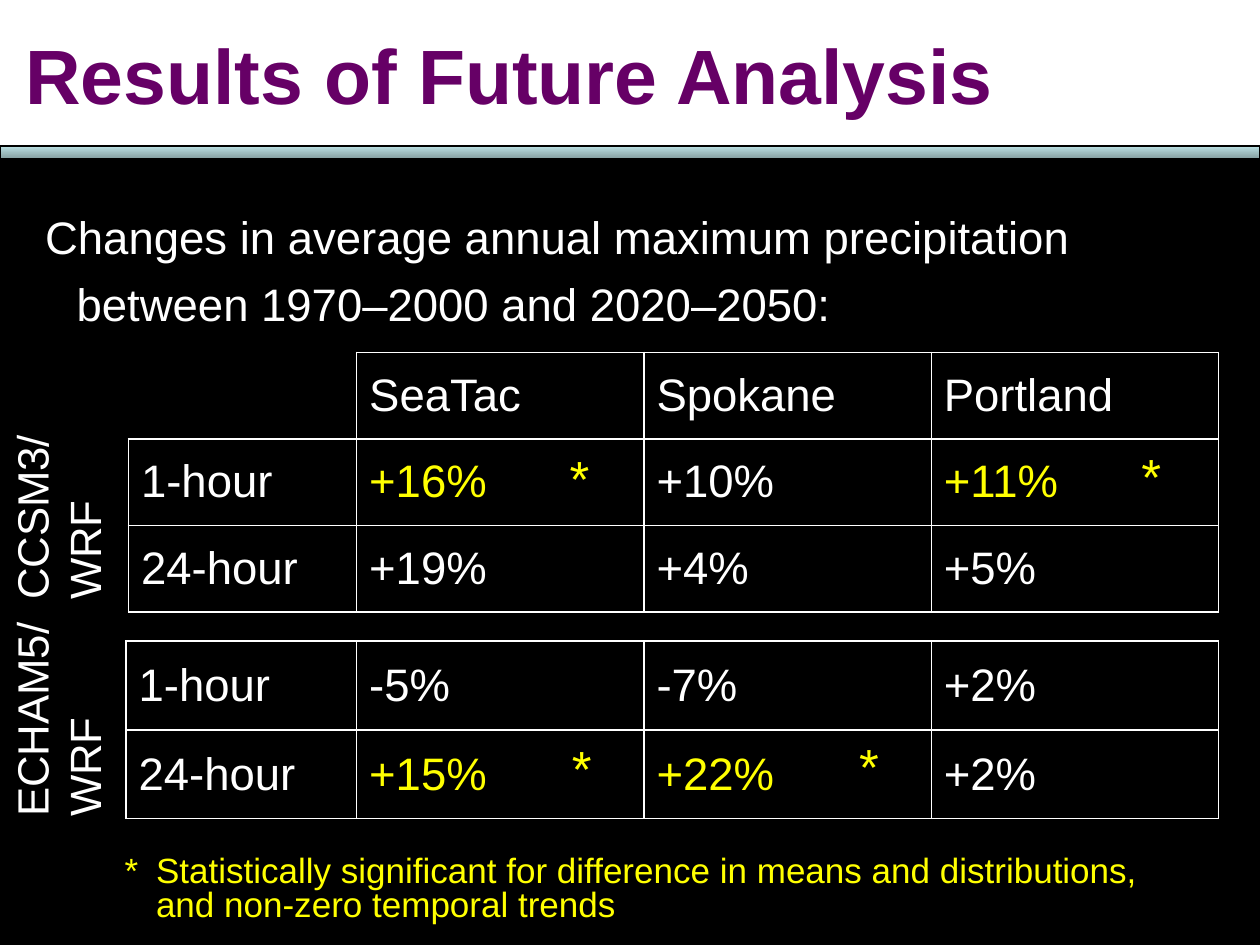
from lxml import etree
from pptx import Presentation
from pptx.dml.color import RGBColor
from pptx.enum import shapes, text
from pptx.oxml import ns
from pptx.util import Pt

COLORS = {"ink": "FFFFFF", "back": "000000", "title": "660066", "star": "FFFF00",
          "bar_top": "BBE0E3", "bar_base": "86A0A2"}
CITY_WIDTH = 164.2


def rgb(name):
    """Return the named colour."""
    return RGBColor.from_string(COLORS[name])


def set_values(target, values):
    """Set each attribute of the target from a dict."""
    for key, value in values.items():
        setattr(target, key, value)


def write(paragraph, words, size, color, **extra):
    """Fill a paragraph with one formatted run."""
    run = paragraph.add_run()
    run.text = words
    set_values(run.font, {"name": "Arial", "size": Pt(size), **extra})
    run.font.color.rgb = rgb(color)


def add_note(slide, box, words, size, color, spacing=1.0, hanging=0, rotation=0):
    """Add a wrapped text box, with an optional hanging indent."""
    note = slide.shapes.add_textbox(*map(Pt, box))
    note.rotation = rotation
    note.text_frame.word_wrap = True
    paragraph = note.text_frame.paragraphs[0]
    paragraph.line_spacing = spacing
    if hanging:
        set_values_xml = {"marL": Pt(hanging), "indent": -Pt(hanging)}
        for key, value in set_values_xml.items():
            paragraph._p.get_or_add_pPr().set(key, str(int(value)))
    write(paragraph, words, size, color)


def add_header(slide, box):
    """Place the title band and the gradient bar along its foot."""
    left, top, width, height = box
    title = slide.shapes.title
    set_values(title, dict(zip(("left", "top", "width", "height"), map(Pt, box))))
    title.fill.solid()
    title.fill.fore_color.rgb = rgb("ink")
    title.line.color.rgb = rgb("ink")
    title.line.width = Pt(0.75)
    set_values(title.text_frame, {
        "margin_left": Pt(14.4), "margin_right": Pt(7.2), "margin_top": Pt(7.2),
        "margin_bottom": Pt(7.2), "word_wrap": False,
        "auto_size": text.MSO_AUTO_SIZE.NONE, "vertical_anchor": text.MSO_ANCHOR.MIDDLE})
    heading = title.text_frame.paragraphs[0]
    heading.alignment = text.PP_ALIGN.LEFT
    write(heading, "Results of Future Analysis", 44, "title", bold=True)

    bar = slide.shapes.add_shape(shapes.MSO_SHAPE.RECTANGLE, Pt(left),
                                 Pt(top + height - 0.5), Pt(width), Pt(7))
    bar.shadow.inherit = False
    bar.fill.gradient()
    bar.fill.gradient_angle = 270
    for stop, name in zip(bar.fill.gradient_stops, ("bar_top", "bar_base")):
        stop.color.rgb = rgb(name)
    bar.line.color.rgb = rgb("back")
    bar.line.width = Pt(0.75)


def set_borders(cell, visible):
    """Draw white lines on the visible sides of a cell and clear the others."""
    properties = cell._tc.get_or_add_tcPr()
    for index, side in enumerate("LRTB"):
        line = etree.Element(ns.qn(f"a:ln{side}"), w=str(int(Pt(1))))
        if side in visible:
            paint = etree.SubElement(line, ns.qn("a:solidFill"))
            etree.SubElement(paint, ns.qn("a:srgbClr"), val=COLORS["ink"])
        else:
            etree.SubElement(line, ns.qn("a:noFill"))
        properties.insert(index, line)


def add_model(slide, box, rows, significant, stars, model, label_box):
    """Place one model's table, its stars and its upright label."""
    left, top, width, height = box
    frame = slide.shapes.add_table(len(rows), len(rows[0]), *map(Pt, box))
    grid = frame.table
    set_values(grid, {"first_row": False, "horz_banding": False})
    for index, column in enumerate(grid.columns):
        column.width = Pt(CITY_WIDTH if index else width - 3 * CITY_WIDTH)
    for r, row in enumerate(rows):
        grid.rows[r].height = Pt(height / len(rows))
        for c, words in enumerate(row):
            cell = grid.cell(r, c)
            cell.fill.background()
            cell.vertical_anchor = text.MSO_ANCHOR.MIDDLE
            set_borders(cell, "LRTB" if words else "RB")
            if words:
                color = "star" if words in significant else "ink"
                write(cell.text_frame.paragraphs[0], words, 26, color)
    for dx, dy in stars:
        add_note(slide, (left + dx, top + dy, 35.3, 41.8), "*", 29, "star")
    dx, dy, length, depth = label_box
    add_note(slide, (left + dx, top + dy, length, depth), model, 25, "ink", rotation=270)


def main():
    """Build the slide and save it."""
    deck = Presentation()
    set_values(deck, {"slide_width": Pt(720), "slide_height": Pt(540)})
    slide = deck.slides.add_slide(deck.slide_layouts[5])
    slide.background.fill.solid()
    slide.background.fill.fore_color.rgb = rgb("back")

    add_header(slide, (0, 0, 720, 84))
    add_note(slide, (18.7, 108.7, 648, 70),
             "Changes in average annual maximum precipitation between 1970–2000 and 2020–2050:",
             26, "ink", spacing=1.23, hanging=18)
    add_model(slide, (73.4, 201.4, 623, 148.3),
              [("", "SeaTac", "Spokane", "Portland"),
               ("1-hour", "+16%", "+10%", "+11%"),
               ("24-hour", "+19%", "+4%", "+5%")],
              {"+16%", "+11%"}, [(245, 50.6), (571.7, 49.2)],
              "CCSM3/WRF", (-95, 59.2, 110.2, 68.4))
    add_model(slide, (72, 366.4, 624.4, 101.4),
              [("1-hour", "-5%", "-7%", "+2%"),
               ("24-hour", "+15%", "+22%", "+2%")],
              {"+15%", "+22%"}, [(247.7, 51.2), (411.8, 49.8)],
              "ECHAM5/WRF", (-104.4, 7.3, 131.8, 68.4))
    add_note(slide, (64.1, 486, 623.5, 38.9),
             "* \tStatistically significant for difference in means and distributions, "
             "and non-zero temporal trends", 20, "star", spacing=0.8, hanging=18)
    deck.save("out.pptx")


if __name__ == "__main__":
    main()
